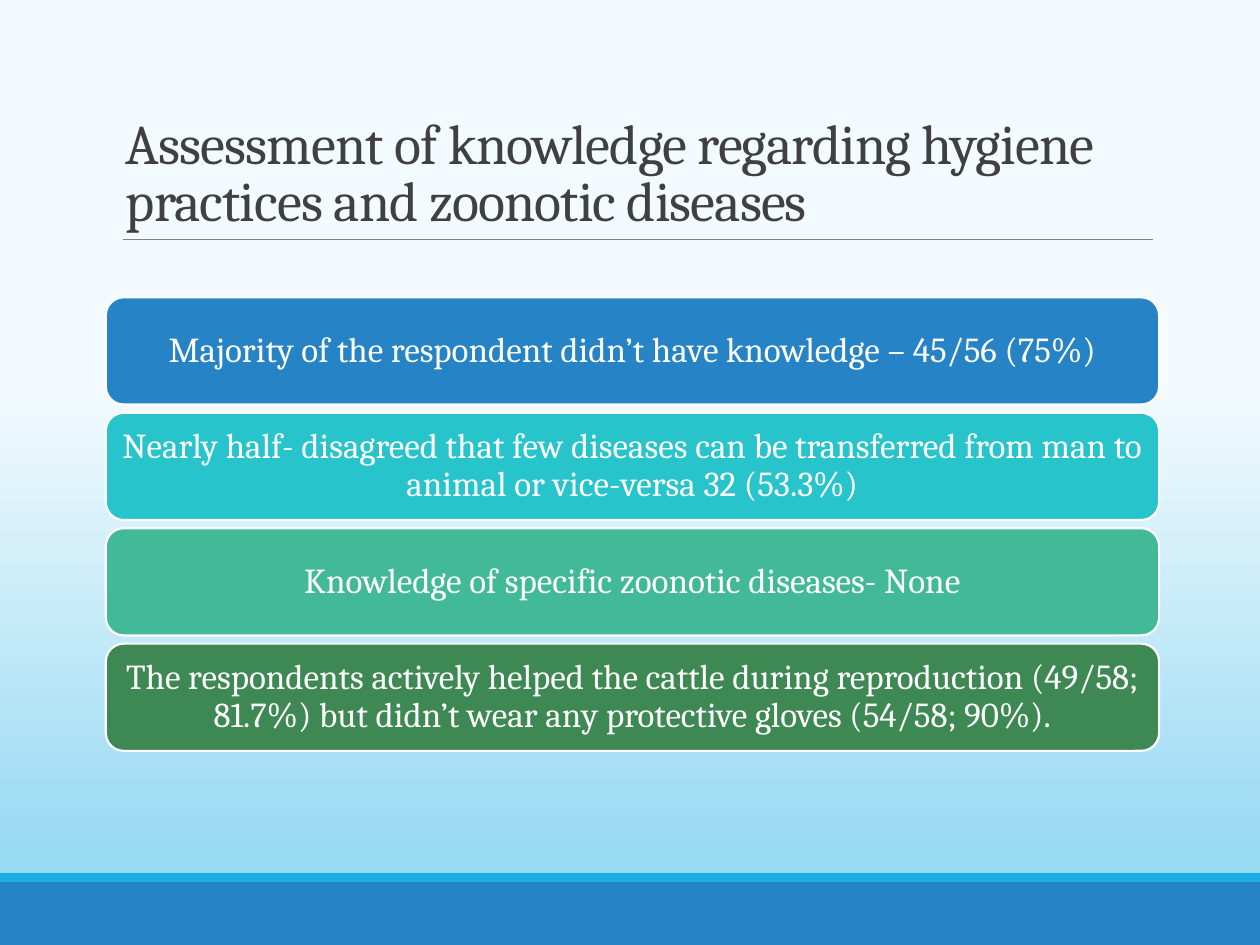
from lxml import etree
from pptx import Presentation, util as u
from pptx.dml.color import RGBColor
from pptx.enum import shapes, text
from pptx.oxml.ns import qn

WIDTH, HEIGHT = 10, 7.5
FINDINGS = [
    ("Majority of the respondent didn’t have knowledge – 45/56 (75%)", "2683C6"),
    ("Nearly half- disagreed that few diseases can be transferred from man to "
     "animal or vice-versa 32 (53.3%)", "28C4CC"),
    ("Knowledge of specific zoonotic diseases- None", "42BA97"),
    ("The respondents actively helped the cattle during reproduction (49/58; 81.7%) "
     "but didn’t wear any protective gloves (54/58; 90%).", "3E8853"),
]


def color(value):
    """Turn a hex string into a colour."""
    return RGBColor.from_string(value)


def write(shape, content, size, fill, align, anchor, leading, inset, spacing=0):
    """Put one formatted paragraph into a shape."""
    frame = shape.text_frame
    frame.word_wrap = True
    frame.vertical_anchor = anchor
    frame.margin_left = frame.margin_right = u.Inches(inset[0])
    frame.margin_top = frame.margin_bottom = u.Inches(inset[1])
    paragraph = frame.paragraphs[0]
    paragraph.alignment = align
    paragraph.line_spacing = leading
    run = paragraph.add_run()
    run.text = content
    run.font.name = "Cambria"
    run.font.size = u.Pt(size)
    run.font.color.rgb = color(fill)
    if spacing:
        run._r.get_or_add_rPr().set("spc", str(round(spacing * 100)))


def add_block(slide, kind, box, fill, outline=None):
    """Add a filled preset shape, with an outline if one is given."""
    shape = slide.shapes.add_shape(kind, *map(u.Inches, box))
    shape.shadow.inherit = False
    shape.fill.solid()
    shape.fill.fore_color.rgb = color(fill)
    if outline:
        shape.line.color.rgb = color(outline)
        shape.line.width = u.Pt(1.25)
    else:
        shape.line.fill.background()
    return shape


def paint_background(slide):
    """Fade the slide from near white to light blue, top to bottom."""
    fill = slide.background.fill
    fill.gradient()
    fill.gradient_angle = 270
    for stop, position, value in zip(fill.gradient_stops, (0.4, 0.9), ("F4FBFE", "99DAF3")):
        stop.position = position
        stop.color.rgb = color(value)


def add_footer(slide, left, top, width, height):
    """Add the bottom band with its thin accent strip on top."""
    strip = height / 8
    rectangle = shapes.MSO_SHAPE.RECTANGLE
    add_block(slide, rectangle, (left, top + strip, width, height - strip), "2683C6")
    add_block(slide, rectangle, (left, top, width, strip), "1CADE4")


def add_title(slide, left, top, width, height):
    """Add the title and the rule below it."""
    box = slide.shapes.add_textbox(*map(u.Inches, (left, top, width, height)))
    write(box, "Assessment of knowledge regarding hygiene practices and zoonotic diseases",
          size=32, fill="404040", align=text.PP_ALIGN.LEFT, anchor=text.MSO_ANCHOR.BOTTOM,
          leading=0.85, inset=(0.1, 0.05), spacing=-0.5)
    bottom = top + height
    ends = (left + 0.08, bottom, left + width, bottom)
    rule = slide.shapes.add_connector(shapes.MSO_CONNECTOR.STRAIGHT, *map(u.Inches, ends))
    rule.line.color.rgb = color("808080")
    rule.line.width = u.Pt(0.5)
    etree.SubElement(rule._element.spPr, qn("a:effectLst"))


def add_findings(slide, left, top, width, height):
    """Stack the findings as equal rounded bars."""
    gap = 0.065
    bar = (height - gap * (len(FINDINGS) - 1)) / len(FINDINGS)
    for row, (content, fill) in enumerate(FINDINGS):
        box = (left, top + row * (bar + gap), width, bar)
        shape = add_block(slide, shapes.MSO_SHAPE.ROUNDED_RECTANGLE, box, fill, "FFFFFF")
        write(shape, content, size=20, fill="FFFFFF", align=text.PP_ALIGN.CENTER,
              anchor=text.MSO_ANCHOR.MIDDLE, leading=0.9, inset=(0.08, 0.08))


def main():
    """Build and save the slide."""
    presentation = Presentation()
    presentation.slide_width = u.Inches(WIDTH)
    presentation.slide_height = u.Inches(HEIGHT)
    slide = presentation.slides.add_slide(presentation.slide_layouts[6])
    paint_background(slide)
    add_footer(slide, 0, 6.93, WIDTH, HEIGHT - 6.93)
    add_title(slide, 0.9, 0.31, 8.25, 1.59)
    add_findings(slide, 0.84, 2.36, 8.36, 3.6)
    presentation.save("out.pptx")


if __name__ == "__main__":
    main()
